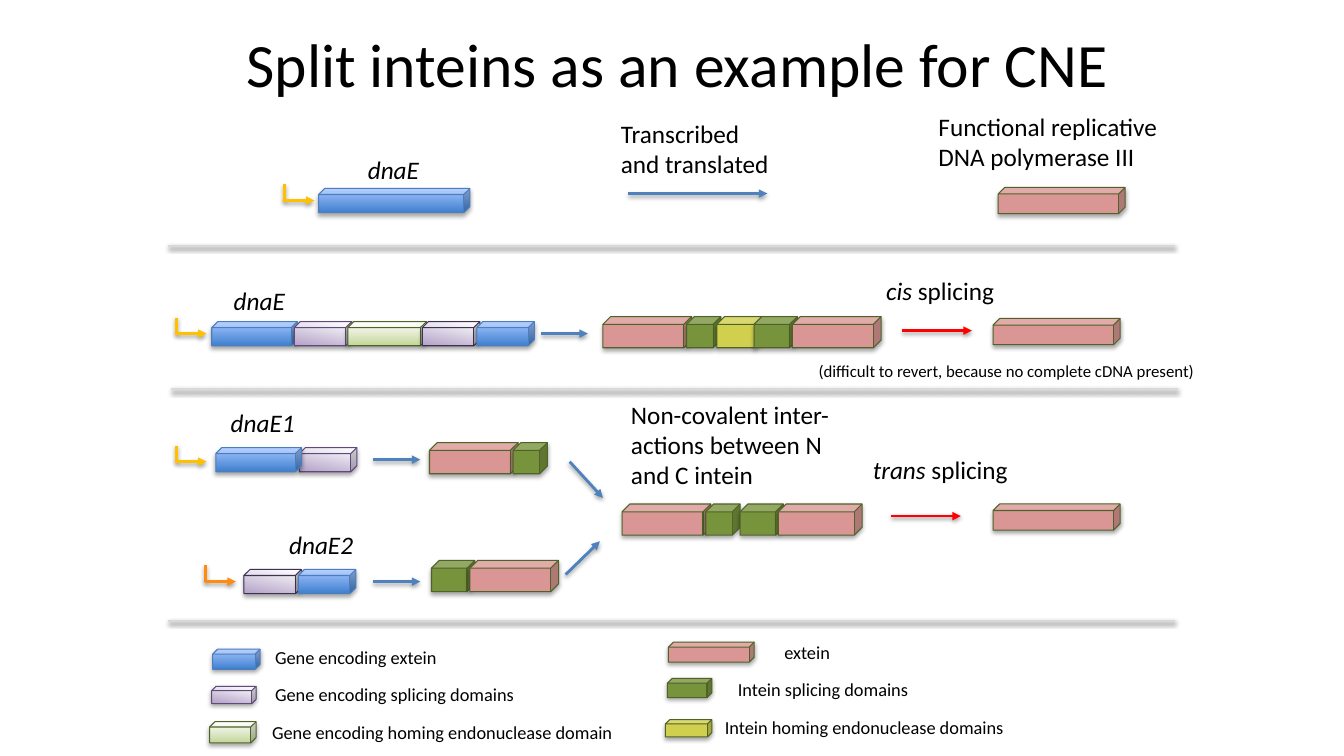
"""Build the split intein slide."""
from dataclasses import dataclass

from pptx import Presentation
from pptx.dml.color import RGBColor
from pptx.enum.shapes import MSO_CONNECTOR, MSO_SHAPE
from pptx.enum.text import MSO_ANCHOR, MSO_AUTO_SIZE, PP_ALIGN
from pptx.oxml import parse_xml
from pptx.oxml.ns import nsdecls, qn
from pptx.util import Inches, Pt


@dataclass(frozen=True)
class Theme:
    """Colours and type sizes."""
    font: str = "Calibri"
    ink: str = "000000"
    flow: str = "4F81BD"
    splice: str = "FF0000"
    rule: str = "D9D9D9"
    gold: str = "FFC000"
    amber: str = "FF8B0F"
    title: float = 44
    body: float = 18
    key: float = 13.1
    note: float = 12
    edge: float = 0.75
    stroke: float = 2


LOOK = Theme()
KINDS = {
    "gene": (("3F80CE", "A4C4FF"), 270, "4B7EBC"),
    "splice": (("B3A2C7", "FFFFFF"), 281, "604A7B"),
    "splice2": (("B3A2C7", "FFFFFF"), 281, "403152"),
    "homing": (("C3D69B", "FFFFFF"), 270, "4F6228"),
    "extein": (("D99694",), 0, "4F6228"),
    "intein": (("77933C",), 0, "4F6228"),
    "nuclease": (("D1CF4E",), 0, "4F6228"),
}
TITLE = "Split inteins as an example for CNE"

# (top, height, [(kind, left, width), ...])
CHAINS = [
    (1.87, 0.24, [("gene", 3.16, 1.5)]),
    (1.86, 0.26, [("extein", 9.9, 1.26)]),
    (3.19, 0.24, [("gene", 2.1, 0.85), ("splice", 2.92, 0.57),
                  ("homing", 3.45, 0.78), ("splice2", 4.19, 0.57),
                  ("gene", 4.73, 0.57)]),
    (3.14, 0.31, [("extein", 5.98, 0.88), ("intein", 6.81, 0.34),
                  ("nuclease", 7.11, 0.45), ("intein", 7.48, 0.43),
                  ("extein", 7.86, 0.88)]),
    (3.16, 0.26, [("extein", 9.85, 1.26)]),
    (4.44, 0.24, [("splice", 2.97, 0.57), ("gene", 2.14, 0.85)]),
    (4.39, 0.31, [("extein", 4.26, 0.88), ("intein", 5.09, 0.34)]),
    (5.65, 0.24, [("splice2", 2.42, 0.57), ("gene", 2.96, 0.57)]),
    (5.56, 0.31, [("intein", 4.28, 0.43), ("extein", 4.66, 0.88)]),
    (5, 0.31, [("extein", 6.17, 0.88), ("intein", 7, 0.34),
               ("intein", 7.34, 0.43), ("extein", 7.72, 0.83)]),
    (5, 0.26, [("extein", 9.85, 1.26)]),
]

# (kind, cube box, label, label left, top, width, wrap)
LEGEND = [
    ("gene", (2.11, 6.44, 0.47, 0.2), "Gene encoding extein", 2.63, 6.36, 1.82, True),
    ("splice", (2.1, 6.81, 0.44, 0.17), "Gene encoding splicing domains",
     2.63, 6.73, 2.6, False),
    ("homing", (2.08, 7.16, 0.46, 0.21), "Gene encoding homing endonuclease domain",
     2.6, 7.11, 3.71, False),
    ("extein", (6.63, 6.37, 0.85, 0.2), "extein", 7.68, 6.31, 1.82, True),
    ("intein", (6.62, 6.73, 0.44, 0.19), "Intein splicing domains",
     7.22, 6.68, 2.31, True),
    ("nuclease", (6.6, 7.14, 0.46, 0.17), "Intein homing endonuclease domains",
     7.09, 7.06, 3.48, True),
]

# (box, [(text, italic), ...], size, wrap)
LABELS = [
    ((6.06, 1.12, 1.84, 0.71), [("Transcribed\nand translated", False)], LOOK.body, True),
    ((9.21, 1.05, 2.46, 0.71),
     [("Functional replicative\nDNA polymerase III", False)], LOOK.body, False),
    ((3.55, 1.48, 0.71, 0.4), [("dnaE", True)], LOOK.body, False),
    ((2.22, 2.78, 1.4, 0.4), [("dnaE", True)], LOOK.body, True),
    ((8.69, 2.68, 1.32, 0.4), [("cis", True), (" splicing", False)], LOOK.body, False),
    ((2.19, 3.99, 0.88, 0.4), [("dnaE1", True)], LOOK.body, True),
    ((2.77, 5.2, 0.84, 0.4), [("dnaE2", True)], LOOK.body, False),
    ((6.16, 3.91, 2.35, 1.01),
     [("Non-covalent inter-actions between N and C intein", False)], LOOK.body, True),
    ((8.56, 4.46, 1.55, 0.4), [("trans", True), (" splicing", False)], LOOK.body, False),
    ((8.02, 3.53, 3.97, 0.3),
     [("(difficult to revert, because no complete cDNA present)", False)],
     LOOK.note, False),
]

FLOWS = [(6.23, 1.92, 7.61, 1.92), (5.37, 3.31, 5.83, 3.31), (3.7, 4.56, 4.17, 4.56),
         (3.7, 5.77, 4.17, 5.77), (5.65, 4.58, 5.98, 4.94), (5.61, 5.7, 5.95, 5.37)]
SPLICES = [(8.95, 3.28), (8.84, 5.12)]
STARTS = [(2.82, 1.83, LOOK.gold), (1.75, 3.15, LOOK.gold),
          (1.75, 4.42, LOOK.gold), (2.04, 5.61, LOOK.amber)]
RULES = [(1.67, 2.44), (1.7, 3.86), (1.67, 6.16)]


def tint(code):
    """Turn a hex code into a colour."""
    return RGBColor.from_string(code)


def shade(shape, dist, alpha):
    """Give a shape a soft shadow below it."""
    shape.element.spPr.append(parse_xml(
        f'<a:effectLst {nsdecls("a")}><a:outerShdw blurRad="40000" dist="{dist}" '
        f'dir="5400000" rotWithShape="0"><a:srgbClr val="000000">'
        f'<a:alpha val="{alpha}"/></a:srgbClr></a:outerShdw></a:effectLst>'))


def write(frame, runs, size=LOOK.body, wrap=True, align=PP_ALIGN.LEFT,
          anchor=MSO_ANCHOR.TOP, fit=MSO_AUTO_SIZE.SHAPE_TO_FIT_TEXT):
    """Write formatted runs into a text frame."""
    frame.word_wrap, frame.auto_size = wrap, fit
    frame.vertical_anchor = anchor
    par = frame.paragraphs[0]
    par.alignment = align
    for text, slant in runs:
        for num, part in enumerate(text.split("\n")):
            if num:
                par.add_line_break()
            run = par.add_run()
            run.text = part
            font = run.font
            font.name, font.size, font.italic = LOOK.font, Pt(size), slant
            font.color.rgb = tint(LOOK.ink)


def label(slide, box, runs, **look):
    """Place a text box."""
    write(slide.shapes.add_textbox(*map(Inches, box)).text_frame, runs, **look)


def cube(slide, kind, box):
    """Draw one domain as a cube."""
    fills, angle, edge = KINDS[kind]
    shape = slide.shapes.add_shape(MSO_SHAPE.CUBE, *map(Inches, box))
    if len(fills) > 1:
        shape.fill.gradient()
        shape.fill.gradient_angle = 360 - angle
        for stop, code in zip(shape.fill.gradient_stops, fills):
            stop.color.rgb = tint(code)
    else:
        shape.fill.solid()
        shape.fill.fore_color.rgb = tint(fills[0])
    shape.line.color.rgb = tint(edge)
    shape.line.width = Pt(LOOK.edge)
    shade(shape, 23000, 35000)


def line(shapes, ends, color, head=True):
    """Draw a straight line, with an arrowhead if asked."""
    wire = shapes.add_connector(MSO_CONNECTOR.STRAIGHT, *map(Inches, ends))
    wire.line.color.rgb = tint(color)
    wire.line.width = Pt(LOOK.stroke)
    if head:
        wire.element.spPr.find(qn("a:ln")).append(
            parse_xml(f'<a:tailEnd {nsdecls("a")} type="triangle"/>'))
    shade(wire, 20000, 38000)


def main():
    """Build and save the deck."""
    deck = Presentation()
    deck.slide_width, deck.slide_height = Inches(13.33), Inches(7.5)
    slide = deck.slides.add_slide(deck.slide_layouts[5])
    title = slide.shapes.title
    title.left, title.top, title.width, title.height = map(Inches, (2.22, 0, 9, 1.25))
    write(title.text_frame, [(TITLE, False)], size=LOOK.title, align=PP_ALIGN.CENTER,
          anchor=MSO_ANCHOR.MIDDLE, fit=MSO_AUTO_SIZE.NONE)
    for top, high, parts in CHAINS:
        for kind, left, wide in parts:
            cube(slide, kind, (left, top, wide, high))
    for kind, box, text, left, top, wide, wrap in LEGEND:
        cube(slide, kind, box)
        label(slide, (left, top, wide, 0.32), [(text, False)], size=LOOK.key, wrap=wrap)
    for ends in FLOWS:
        line(slide.shapes, ends, LOOK.flow)
    for left, top in SPLICES:
        line(slide.shapes, (left, top, left + 0.69, top), LOOK.splice)
    for left, top, color in STARTS:
        group = slide.shapes.add_group_shape()
        base = top + 0.16
        line(group.shapes, (left, top, left, base), color, head=False)
        line(group.shapes, (left - 0.01, base, left + 0.3, base), color)
    for left, top in RULES:
        line(slide.shapes, (left, top, left + 9.98, top), LOOK.rule, head=False)
    for box, runs, size, wrap in LABELS:
        label(slide, box, runs, size=size, wrap=wrap)
    deck.save("out.pptx")


if __name__ == "__main__":
    main()
